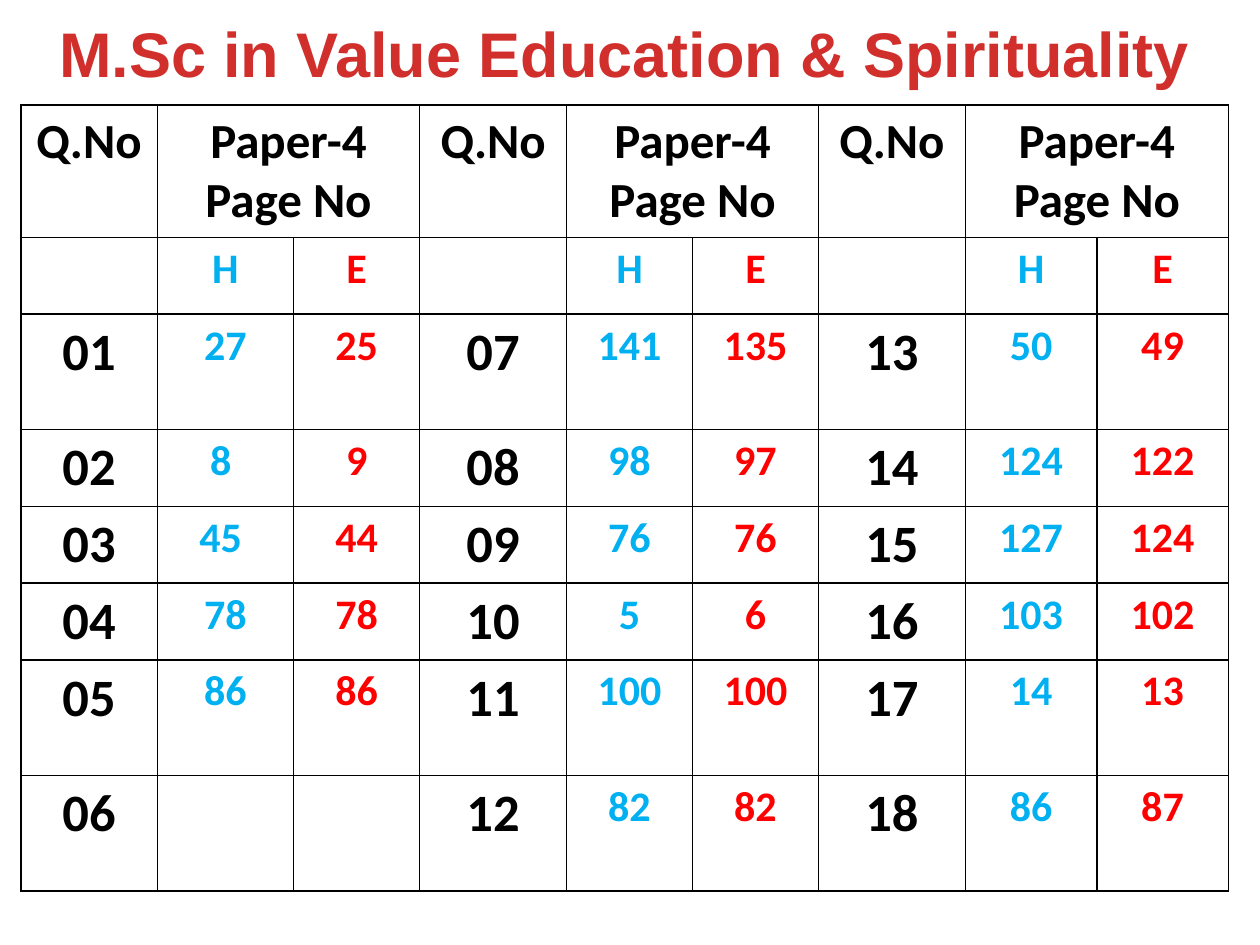
from lxml.etree import SubElement
from pptx import Presentation
from pptx.dml.color import RGBColor
from pptx.enum.text import MSO_ANCHOR, MSO_AUTO_SIZE, PP_ALIGN
from pptx.oxml.ns import qn
from pptx.util import Cm, Pt

BLACK = RGBColor(0x00, 0x00, 0x00)
BLUE = RGBColor(0x00, 0xB0, 0xF0)
RED = RGBColor(0xFF, 0x00, 0x00)
TITLE_RED = RGBColor(0xD0, 0x2F, 0x2C)

COLUMN_WIDTHS = [2.75, 2.75, 2.54, 2.96, 2.54, 2.54, 2.96, 2.65, 2.65]
ROW_HEIGHTS = [2.67, 1.54, 2.33, 1.54, 1.54, 1.54, 2.33, 2.33]
BLOCK = 3
HEADINGS = ["Q.No", "Paper-4\nPage No", ""] * BLOCK
LANGUAGES = ["", "H", "E"] * BLOCK
PAGES = [
    ["01", "27", "25", "07", "141", "135", "13", "50", "49"],
    ["02", "8 ", "9", "08", "98", "97", "14", "124", "122"],
    ["03", "45 ", "44", "09", "76", "76", "15", "127", "124"],
    ["04", "78", "78", "10", "5", "6", "16", "103", "102"],
    ["05", "86", "86", "11", "100", "100", "17", "14", "13"],
    ["06", "", "", "12", "82", "82", "18", "86", "87"],
]


class SlideBuilder:
    heading = {"name": "Calibri", "size": Pt(28), "bold": True, "color": BLACK}
    columns = [
        heading | {"size": Pt(30)},
        heading | {"size": Pt(24), "color": BLUE},
        heading | {"size": Pt(24), "color": RED},
    ]
    title_format = {"name": "Arial", "size": Pt(36), "bold": True, "color": TITLE_RED}

    def __init__(self, presentation):
        self.slide = presentation.slides.add_slide(presentation.slide_layouts[0])
        subtitle = self.slide.placeholders[1].element
        subtitle.getparent().remove(subtitle)

    def fill_text(self, text_frame, text, format_values):
        text_frame.text = text
        for paragraph in text_frame.paragraphs:
            paragraph.alignment = PP_ALIGN.CENTER
            for run in paragraph.runs:
                for name, value in format_values.items():
                    if name == "color":
                        run.font.color.rgb = value
                    else:
                        setattr(run.font, name, value)

    def add_title(self, text, left, top, width, height):
        title = self.slide.shapes.title
        position = {"left": left, "top": top, "width": width, "height": height}
        for name, value in position.items():
            setattr(title, name, Cm(value))
        frame_values = {
            "word_wrap": True,
            "auto_size": MSO_AUTO_SIZE.NONE,
            "vertical_anchor": MSO_ANCHOR.MIDDLE,
        }
        for name, value in frame_values.items():
            setattr(title.text_frame, name, value)
        self.fill_text(title.text_frame, text, self.title_format)

    def add_borders(self, cell):
        properties = cell._tc.get_or_add_tcPr()
        for side in ("a:lnL", "a:lnR", "a:lnT", "a:lnB"):
            line = SubElement(properties, qn(side), w=str(Pt(1)))
            fill = SubElement(line, qn("a:solidFill"))
            SubElement(fill, qn("a:srgbClr"), val=str(BLACK))

    def add_table(self, rows, left, top):
        table = self.slide.shapes.add_table(
            len(rows), len(COLUMN_WIDTHS), Cm(left), Cm(top),
            Cm(sum(COLUMN_WIDTHS)), Cm(sum(ROW_HEIGHTS)),
        ).table
        table.first_row = table.horz_banding = False
        for column, width in zip(table.columns, COLUMN_WIDTHS):
            column.width = Cm(width)
        for row, height in zip(table.rows, ROW_HEIGHTS):
            row.height = Cm(height)
        for row_index, texts in enumerate(rows):
            for column_index, text in enumerate(texts):
                cell = table.cell(row_index, column_index)
                style = self.columns[column_index % BLOCK] if row_index else self.heading
                self.fill_text(cell.text_frame, text, style)
                self.add_borders(cell)
                cell.fill.background()
        for first in range(1, len(COLUMN_WIDTHS), BLOCK):
            table.cell(0, first).merge(table.cell(0, first + 1))


def main():
    presentation = Presentation()
    presentation.slide_width = Cm(25.4)
    presentation.slide_height = Cm(19.05)
    builder = SlideBuilder(presentation)
    builder.add_title("M.Sc in Value Education & Spirituality", 0.42, 0.42, 24.34, 1.27)
    builder.add_table([HEADINGS, LANGUAGES] + PAGES, 0.42, 2.12)
    presentation.save("out.pptx")


if __name__ == "__main__":
    main()
